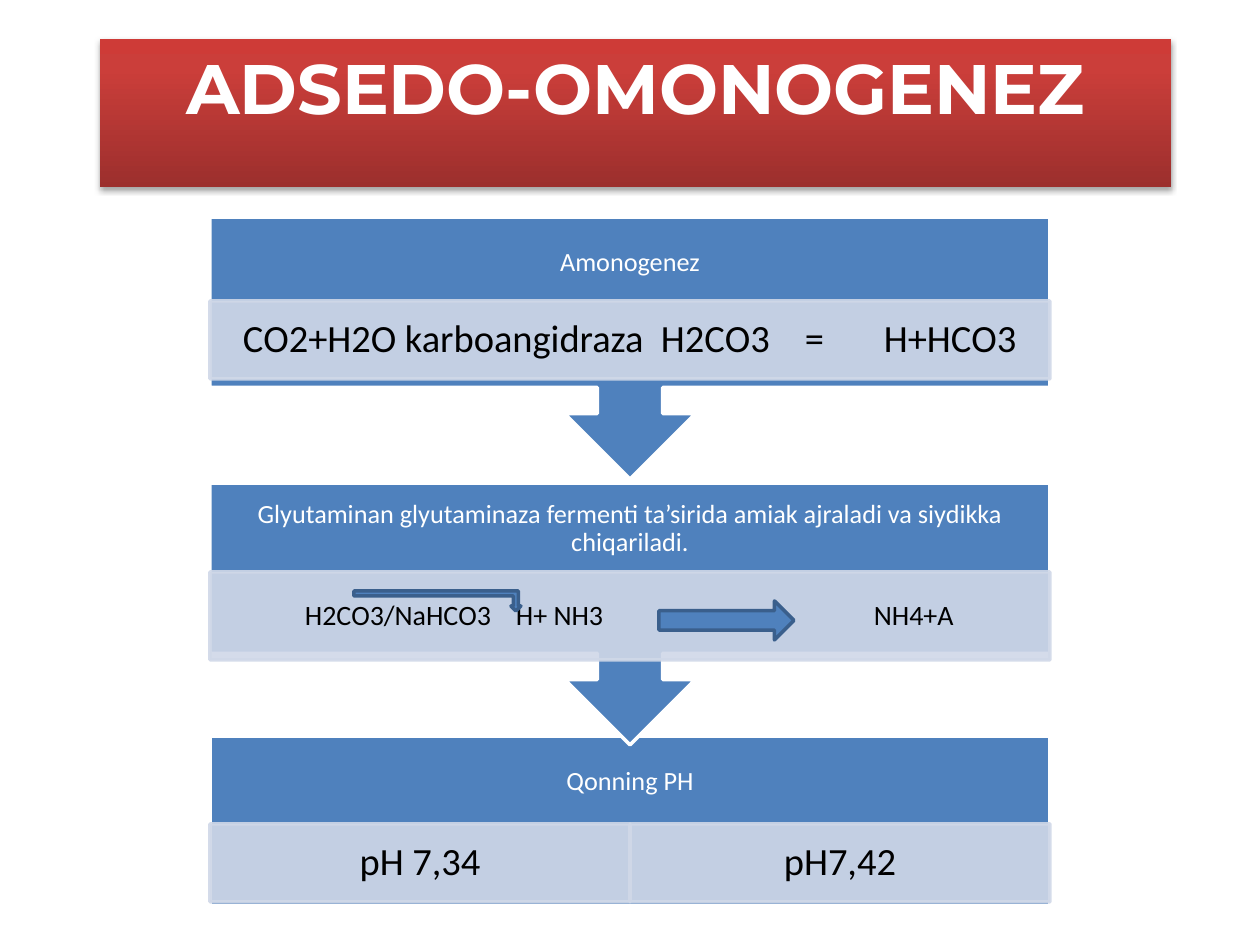
from copy import deepcopy

from lxml import etree
from pptx import Presentation
from pptx.dml.color import RGBColor
from pptx.enum.shapes import MSO_SHAPE
from pptx.enum.text import MSO_ANCHOR, MSO_AUTO_SIZE, PP_ALIGN
from pptx.oxml.ns import qn
from pptx.util import Emu, Pt

PX = 914400 // 126
RECTANGLE = MSO_SHAPE.RECTANGLE
CALLOUT = MSO_SHAPE.UP_ARROW_CALLOUT
MIDDLE, TOP = MSO_ANCHOR.MIDDLE, MSO_ANCHOR.TOP
CENTER, LEFT = PP_ALIGN.CENTER, PP_ALIGN.LEFT

WHITE = RGBColor(0xFF, 0xFF, 0xFF)
BLACK = RGBColor(0, 0, 0)
BLUE = RGBColor(0x4F, 0x81, 0xBD)
DARK_BLUE = RGBColor(0x3A, 0x5F, 0x8C)
PALE_BLUE = RGBColor(0xD0, 0xD8, 0xE8)
TITLE_STOPS = [(0, RGBColor(0x9C, 0x2F, 0x2D)),
               (0.8, RGBColor(0xCB, 0x3E, 0x3A)),
               (1, RGBColor(0xCE, 0x3B, 0x37))]

# Content: a cell is a list of (text, start in px); one text alone is centred
TITLE = "ADSEDO-OMONOGENEZ"
STAGES = [
    {"header": "Amonogenez", "top": 217, "cell_top": 301, "cell_height": 78,
     "size": 22, "shape": CALLOUT,
     "cells": [[("СО2+Н2О karboangidraza", 243), ("Н2СО3", 661),
                ("=", 805), ("Н+НСО3", 884)]]},
    {"header": "Glyutaminan glyutaminaza fermenti ta’sirida amiak ajraladi "
               "va siydikka chiqariladi.",
     "top": 483, "cell_top": 572, "cell_height": 88, "size": 16,
     "shape": CALLOUT,
     "cells": [[("Н2СО3/NaНСО3", 305), ("Н+ NH3", 516), ("NH4+A", 874)]]},
    {"header": "Qonning РН", "top": 736, "cell_top": 824, "cell_height": 78,
     "size": 22, "shape": RECTANGLE,
     "cells": [[("рН 7,34", 0)], [("рН7,42", 0)]]},
]
STAGE_LEFT, STAGE_WIDTH, HEADER_HEIGHT = 210, 840, 92
STAGE_HEIGHT = {CALLOUT: 262, RECTANGLE: 170}
ARROWS = [(MSO_SHAPE.RIGHT_ARROW, (659, 601, 135, 39), False),
          (MSO_SHAPE.BENT_UP_ARROW, (354, 591, 167, 20), True)]


def px(*lengths):
    return [Emu(length * PX) for length in lengths]


def add_shape(slide, kind, box, fill, line, alpha=None):
    shape = slide.shapes.add_shape(kind, *px(*box))
    shape.shadow.inherit = False
    shape.fill.solid()
    shape.fill.fore_color.rgb = fill
    shape.line.color.rgb = line
    shape.line.width = Pt(2)
    if alpha:
        for color in shape._element.spPr.iter(qn("a:srgbClr")):
            etree.SubElement(color, qn("a:alpha"), val=str(alpha * 1000))
    return shape


def write(shape, text, anchor=MIDDLE, align=CENTER, insets=(15, 4, 15, 4),
          spacing=0.9, **font):
    frame = shape.text_frame
    frame.word_wrap = True
    frame.auto_size = MSO_AUTO_SIZE.NONE
    frame.vertical_anchor = anchor
    sides = ("left", "top", "right", "bottom")
    for side, inset in zip(sides, px(*insets)):
        setattr(frame, f"margin_{side}", inset)
    paragraph = frame.paragraphs[0]
    paragraph.alignment = align
    paragraph.line_spacing = spacing
    run = paragraph.add_run()
    run.text = text
    run.font.color.rgb = font.pop("color")
    for name, value in font.items():
        setattr(run.font, name, value)
    return paragraph


def write_cell(shape, left, parts, size):
    text = "\t".join(part for part, start in parts)
    font = {"size": Pt(size), "name": "Calibri", "color": BLACK}
    if len(parts) == 1:
        write(shape, text, **font)
        return
    first = parts[0][1]
    paragraph = write(shape, text, align=LEFT,
                      insets=(first - left, 4, 0, 4), **font)
    # Tab stops place the later parts of the formula
    tabs = etree.SubElement(paragraph._p.get_or_add_pPr(), qn("a:tabLst"))
    for part, start in parts[1:]:
        etree.SubElement(tabs, qn("a:tab"), pos=str((start - first) * PX),
                         algn="l")


def add_title(slide):
    title = slide.shapes.title
    title.left, title.top, title.width, title.height = px(100, 39, 1071, 148)
    write(title, TITLE, anchor=TOP, insets=(12, 6, 12, 6), spacing=1.0,
          size=Pt(40), name="Montserrat", bold=True, color=WHITE)
    # Three-stop gradient, dark at the bottom
    title.fill.gradient()
    title.fill.gradient_angle = 90
    properties = title._element.spPr
    stop_list = properties.find(".//" + qn("a:gsLst"))
    stop_list.append(deepcopy(stop_list[0]))
    for stop, (position, color) in zip(title.fill.gradient_stops, TITLE_STOPS):
        stop.position = position
        stop.color.rgb = color
    # Soft shadow below
    effects = etree.SubElement(properties, qn("a:effectLst"))
    shadow = etree.SubElement(effects, qn("a:outerShdw"), blurRad="40000",
                              dist="23000", dir="5400000", rotWithShape="0")
    color = etree.SubElement(shadow, qn("a:srgbClr"), val="000000")
    etree.SubElement(color, qn("a:alpha"), val="35000")


def add_stage(slide, stage):
    kind, top = stage["shape"], stage["top"]
    body = add_shape(slide, kind, (STAGE_LEFT, top, STAGE_WIDTH,
                                   STAGE_HEIGHT[kind]), BLUE, WHITE)
    if kind == CALLOUT:
        body.rotation = 180
    header = slide.shapes.add_textbox(
        *px(STAGE_LEFT, top, STAGE_WIDTH, HEADER_HEIGHT))
    write(header, stage["header"], insets=(15, 15, 15, 15), size=Pt(15),
          name="Calibri", color=WHITE)
    width = STAGE_WIDTH // len(stage["cells"])
    for index, parts in enumerate(stage["cells"]):
        left = STAGE_LEFT + index * width
        cell = add_shape(slide, RECTANGLE, (left, stage["cell_top"], width,
                                            stage["cell_height"]),
                         PALE_BLUE, PALE_BLUE, alpha=90)
        write_cell(cell, left, parts, stage["size"])


def main():
    presentation = Presentation()
    presentation.slide_width, presentation.slide_height = px(1260, 945)
    slide = presentation.slides.add_slide(presentation.slide_layouts[5])
    add_title(slide)
    # Lower stages lie behind the arrows of the upper ones
    for stage in reversed(STAGES):
        add_stage(slide, stage)
    for kind, box, flipped in ARROWS:
        arrow = add_shape(slide, kind, box, BLUE, DARK_BLUE)
        if flipped:
            arrow._element.spPr.find(qn("a:xfrm")).set("flipV", "1")
    presentation.save("out.pptx")


if __name__ == "__main__":
    main()
